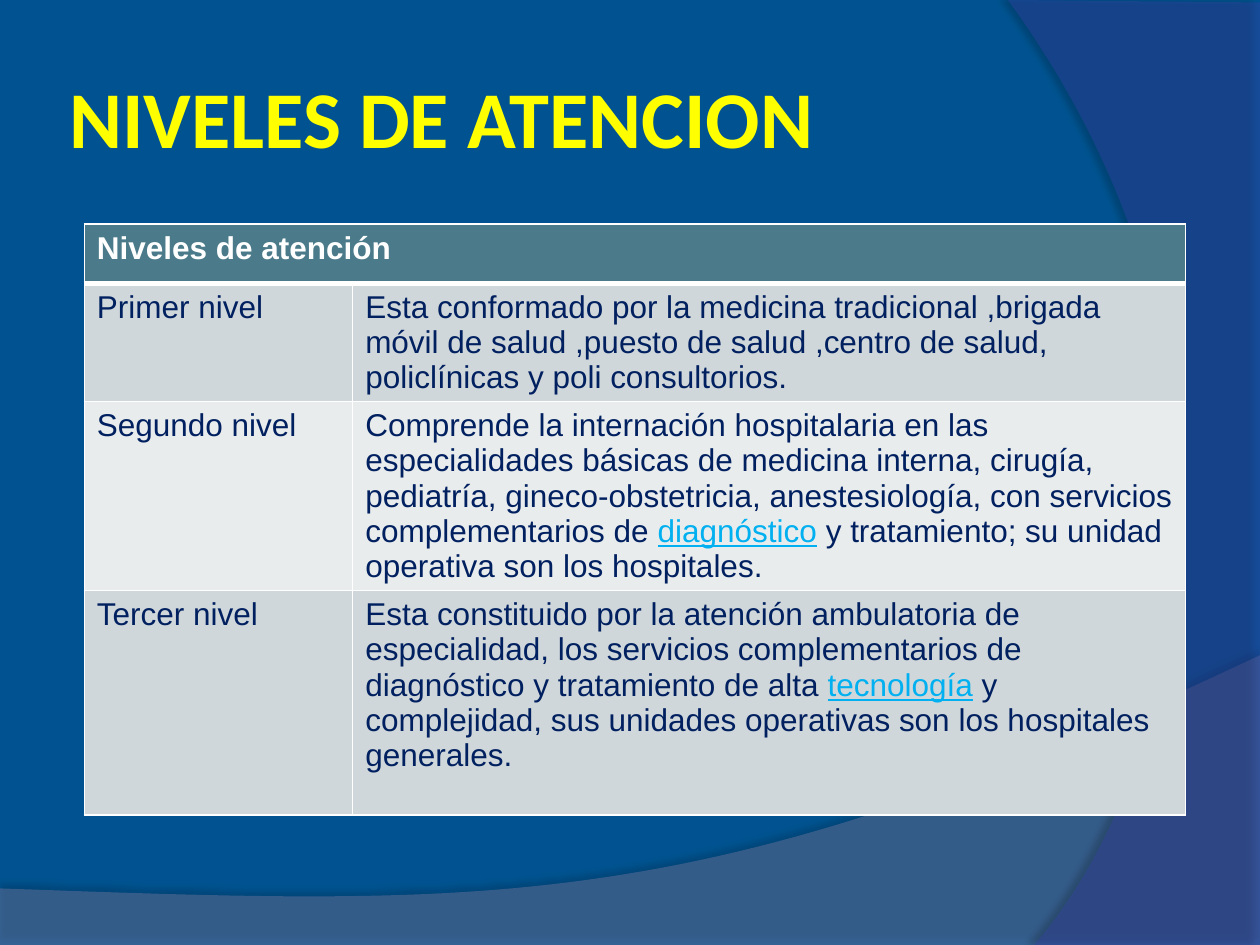
from lxml import etree
from pptx import Presentation
from pptx.dml.color import RGBColor
from pptx.enum.text import MSO_ANCHOR, PP_ALIGN
from pptx.oxml.ns import qn
from pptx.util import Cm, Pt

MIDDLE, LEFT = MSO_ANCHOR.MIDDLE, PP_ALIGN.LEFT

# Content: a cell is a list of runs, a tuple marks an underlined term
TITLE = "NIVELES DE ATENCION"
HEAD = "Niveles de atención"
LEVELS = [
    ("Primer nivel", [
        "Esta conformado por la medicina tradicional ,brigada móvil de salud "
        ",puesto de salud ,centro de salud, policlínicas y poli consultorios."]),
    ("Segundo nivel", [
        "Comprende la internación hospitalaria en las especialidades básicas "
        "de medicina interna, cirugía, pediatría, gineco-obstetricia, "
        "anestesiología, con servicios complementarios de ",
        ("diagnóstico",),
        " y tratamiento; su unidad operativa son los hospitales."]),
    ("Tercer nivel", [
        "Esta constituido por la atención ambulatoria de especialidad, los "
        "servicios complementarios de diagnóstico y tratamiento de alta ",
        ("tecnología",),
        " y complejidad, sus unidades operativas son los hospitales generales."]),
]
COLS = [5.41, 16.79]
ROWS = [1.19, 2.38, 3.81, 4.52]
BANDS = ["D0D7DA", "E9ECED"]

# Waves in cm: straight corners, then a curve from the last corner
WAVES = [
    dict(line=[(0, 17.91), (0, 19.05), (25.4, 19.05), (25.4, 13.21)],
         curve=[(14.2, 18.52), (9.93, 18.26), (0, 17.91)],
         fill="74789E", alpha=45, shade=35, blur=4, dist=3.5, turn=270),
    dict(line=[(20.32, 0), (25.4, 0.05), (25.4, 19.05), (20.85, 19.05)],
         curve=[(23.75, 15.72), (25.86, 7.62), (20.32, 0)],
         fill="3641A5", alpha=40, shade=45, blur=4, dist=4, turn=180),
]


def rgb(code):
    return RGBColor.from_string(code)


def paint(fill, code):
    fill.solid()
    fill.fore_color.rgb = rgb(code)


def style(run, font, size, code, bold=False):
    run.font.name, run.font.size, run.font.bold = font, Pt(size), bold
    run.font.color.rgb = rgb(code)


def sub(node, tag, **attrs):
    return etree.SubElement(node, qn(tag), {k: str(v) for k, v in attrs.items()})


def bend(a, b, c, d, steps=60):
    """Points along a cubic curve."""
    for i in range(1, steps + 1):
        t = i / steps
        u = 1 - t
        yield tuple(u**3 * p + 3 * u * u * t * q + 3 * u * t * t * r + t**3 * s
                    for p, q, r, s in zip(a, b, c, d))


def add_wave(slide, wave, rank):
    line = wave["line"]
    points = line + list(bend(line[-1], *wave["curve"]))
    points = [(Cm(x), Cm(y)) for x, y in points]
    form = slide.shapes.build_freeform(*points[0], scale=1.0)
    form.add_line_segments(points[1:], close=True)
    shape = form.convert_to_shape()
    paint(shape.fill, wave["fill"])
    shape.line.fill.background()
    shape.shadow.inherit = False
    props = shape.element.spPr
    tint = props.find(qn("a:solidFill"))[0]
    sub(tint, "a:alpha", val=wave["alpha"] * 1000)
    glow = sub(props.find(qn("a:effectLst")), "a:outerShdw",
               blurRad=Pt(wave["blur"]), dist=Pt(wave["dist"]),
               dir=wave["turn"] * 60000, algn="ctr", rotWithShape=0)
    sub(sub(glow, "a:srgbClr", val="000000"), "a:alpha", val=wave["shade"] * 1000)
    slide.shapes.element.insert(2 + rank, shape.element)  # behind the title


def edge(cell, **wide):
    """White borders, one point unless given by side."""
    props = cell._tc.get_or_add_tcPr()
    for i, side in enumerate("LRTB"):
        line = sub(props, "a:ln" + side, w=Pt(wide.get(side, 1)))
        sub(sub(line, "a:solidFill"), "a:srgbClr", val="FFFFFF")
        props.insert(i, line)


def write(cell, parts, code, bold=False):
    para = cell.text_frame.paragraphs[0]
    for part in parts:
        term = isinstance(part, tuple)
        run = para.add_run()
        run.text = part[0] if term else part
        style(run, "Arial", 18, "00B0F0" if term else code, bold)
        if term:
            run.font.underline = True


def add_levels(slide):
    grid = slide.shapes.add_table(len(ROWS), len(COLS), Cm(1.7), Cm(4.52),
                                  Cm(sum(COLS)), Cm(sum(ROWS))).table
    for col, wide in zip(grid.columns, COLS):
        col.width = Cm(wide)
    for row, high in zip(grid.rows, ROWS):
        row.height = Cm(high)
    # Heading row across both columns
    for cell in grid.rows[0].cells:
        paint(cell.fill, "4B7B8A")
        edge(cell, B=3)
    grid.cell(0, 0).merge(grid.cell(0, 1))
    write(grid.cell(0, 0), [HEAD], "FFFFFF", True)
    # One banded row per level
    for i, (name, parts) in enumerate(LEVELS):
        for j, text in enumerate(([name], parts)):
            cell = grid.cell(i + 1, j)
            paint(cell.fill, BANDS[i % 2])
            edge(cell, T=1 if i else 3)
            write(cell, text, "002060")


def add_title(slide):
    title = slide.shapes.title
    title.left, title.top = Cm(1.27), Cm(0.76)
    title.width, title.height = Cm(20.75), Cm(3.18)
    frame = title.text_frame
    frame.text = TITLE
    frame.vertical_anchor = MIDDLE
    frame.margin_left = frame.margin_right = Cm(0.13)
    frame.margin_top = frame.margin_bottom = Cm(0.13)
    para = frame.paragraphs[0]
    para.alignment = LEFT
    style(para.runs[0], "Calibri", 46, "FFFF00", True)


def main():
    deck = Presentation()
    deck.slide_width, deck.slide_height = Cm(25.4), Cm(19.05)
    slide = deck.slides.add_slide(deck.slide_layouts[5])
    paint(slide.background.fill, "005390")
    add_title(slide)
    for rank, wave in enumerate(WAVES):
        add_wave(slide, wave, rank)
    add_levels(slide)
    deck.save("out.pptx")


if __name__ == "__main__":
    main()
